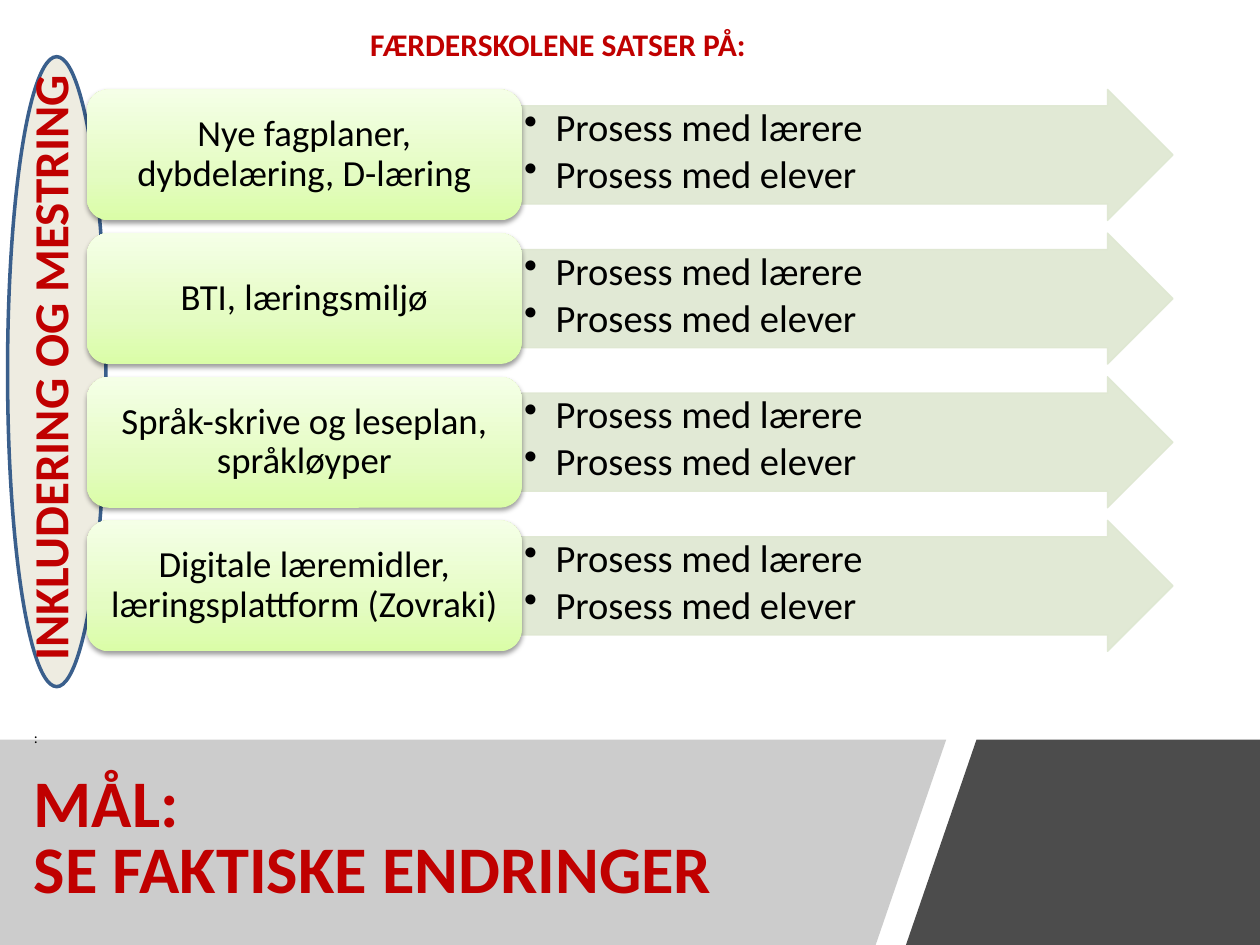
import pptx
import pptx.dml.color
import pptx.enum.shapes
import pptx.enum.text
import pptx.oxml
import pptx.oxml.ns
import pptx.util
from lxml import etree

Inches = pptx.util.Inches
Pt = pptx.util.Pt
SHAPE = pptx.enum.shapes.MSO_SHAPE
ANCHOR = pptx.enum.text.MSO_ANCHOR
ALIGN = pptx.enum.text.PP_ALIGN

HEADING = "FÆRDERSKOLENE SATSER PÅ:"
SIDE_LABEL = "INKLUDERING OG MESTRING"
GOAL_MARK = ":"
GOAL = ["MÅL:", "SE FAKTISKE ENDRINGER"]
PROCESSES = ["Prosess med lærere", "Prosess med elever"]
FOCUS_AREAS = [
    "Nye fagplaner, dybdelæring, D-læring",
    "BTI, læringsmiljø",
    "Språk-skrive og leseplan, språkløyper",
    "Digitale læremidler, læringsplattform (Zovraki)",
]
BANDS = [
    ([(0, 5.87), (7.51, 5.87), (6.95, 7.5), (0, 7.5)], "808080", 40),
    ([(7.75, 5.87), (10, 5.87), (10, 7.5), (7.19, 7.5)], "000000", 70),
]
THEME = {
    "font": "Calibri",
    "text": "000000",
    "accent": "C00000",
    "ellipse": "EEECE1",
    "ellipse_line": "3A5F8C",
    "arrow": "DEE7D1",
    "gradient": [(0, "DAFDA7"), (35, "E4FCC2"), (100, "F5FFE7")],
    "mark": 8.6,
    "goal": 38,
    "heading": 18,
    "side": 28,
    "area": 21,
    "process": 22,
}
ROW_TOP, ROW_STEP, ROW_HEIGHT = 0.71, 1.14, 1.04
AREA_LEFT, AREA_WIDTH, ARROW_WIDTH = 0.69, 3.45, 5.17


def rgb(code):
    return pptx.dml.color.RGBColor.from_string(code)


def paint(fill, code, opacity=100):
    fill.solid()
    fill.fore_color.rgb = rgb(code)
    if opacity < 100:
        color = fill._xPr.find(".//" + pptx.oxml.ns.qn("a:srgbClr"))
        etree.SubElement(color, pptx.oxml.ns.qn("a:alpha")).set("val", str(opacity * 1000))


def add_preset(page, kind, left, top, width, height):
    shape = page.shapes.add_shape(
        kind, Inches(left), Inches(top), Inches(width), Inches(height))
    shape.shadow.inherit = False
    return shape


def add_label(page, left, top, width, height):
    box = page.shapes.add_textbox(
        Inches(left), Inches(top), Inches(width), Inches(height))
    box.text_frame.word_wrap = True
    return box


def style(para, size, color="text", bold=False, align=ALIGN.LEFT, spacing=1.0, after=0):
    para.alignment = align
    para.line_spacing = spacing
    para.space_after = Pt(after)
    for span in para.runs:
        span.font.name = THEME["font"]
        span.font.size = Pt(THEME[size])
        span.font.bold = bold
        span.font.color.rgb = rgb(THEME[color])


def set_margins(frame, side, edge):
    frame.margin_left = frame.margin_right = Inches(side)
    frame.margin_top = frame.margin_bottom = Inches(edge)


def add_bullet(para):
    props = para._p.get_or_add_pPr()
    props.set("marL", str(Inches(0.25)))
    props.set("indent", str(-Inches(0.25)))
    etree.SubElement(props, pptx.oxml.ns.qn("a:buChar")).set("char", "•")


def add_gradient_and_shadow(shape):
    namespace = pptx.oxml.ns.nsdecls("a")
    stops = "".join(
        f'<a:gs pos="{place * 1000}"><a:srgbClr val="{code}"/></a:gs>'
        for place, code in THEME["gradient"])
    gradient = pptx.oxml.parse_xml(
        f'<a:gradFill {namespace} rotWithShape="1"><a:gsLst>{stops}</a:gsLst>'
        '<a:lin ang="16200000" scaled="0"/></a:gradFill>')
    shadow = pptx.oxml.parse_xml(
        f'<a:outerShdw {namespace} blurRad="{Pt(3.1)}" dist="{Pt(1.6)}" dir="5400000" '
        'rotWithShape="0"><a:srgbClr val="000000"><a:alpha val="38000"/></a:srgbClr></a:outerShdw>')
    props = shape._element.spPr
    props.find(pptx.oxml.ns.qn("a:prstGeom")).addnext(gradient)
    props.find(pptx.oxml.ns.qn("a:effectLst")).append(shadow)


def add_band(page, points, code, opacity):
    corners = [(Inches(x), Inches(y)) for x, y in points]
    builder = page.shapes.build_freeform(*corners[0])
    builder.add_line_segments(corners[1:], close=True)
    band = builder.convert_to_shape()
    band.shadow.inherit = False
    paint(band.fill, code, opacity)
    band.line.fill.background()


def add_row(page, top, area):
    arrow = add_preset(page, SHAPE.RIGHT_ARROW, AREA_LEFT + AREA_WIDTH, top, ARROW_WIDTH, ROW_HEIGHT)
    arrow.adjustments[0] = 0.75
    paint(arrow.fill, THEME["arrow"], 90)
    paint(arrow.line.fill, THEME["arrow"], 90)
    arrow.line.width = Pt(0.75)
    frame = arrow.text_frame
    set_margins(frame, 0.02, 0.02)
    frame.vertical_anchor = ANCHOR.TOP
    frame.text = "\n".join(PROCESSES)
    for para in frame.paragraphs:
        style(para, "process", spacing=0.9, after=3)
        add_bullet(para)

    card = add_preset(page, SHAPE.ROUNDED_RECTANGLE, AREA_LEFT, top, AREA_WIDTH, ROW_HEIGHT)
    card.line.fill.background()
    add_gradient_and_shadow(card)
    frame = card.text_frame
    set_margins(frame, 0.09, 0.04)
    frame.vertical_anchor = ANCHOR.MIDDLE
    frame.text = area
    style(frame.paragraphs[0], "area", align=ALIGN.CENTER, spacing=0.9)


def main():
    deck = pptx.Presentation()
    deck.slide_width, deck.slide_height = Inches(10), Inches(7.5)
    page = deck.slides.add_slide(deck.slide_layouts[6])

    ellipse = add_preset(page, SHAPE.OVAL, 0.06, 0.45, 0.78, 5)
    paint(ellipse.fill, THEME["ellipse"])
    paint(ellipse.line.fill, THEME["ellipse_line"])
    ellipse.line.width = Pt(2)

    for band in BANDS:
        add_band(page, *band)

    goal = add_label(page, 0.17, 5.77, 6.85, 1.6)
    goal.text_frame.text = "\n".join([GOAL_MARK] + GOAL)
    mark, *lines = goal.text_frame.paragraphs
    style(mark, "mark", spacing=0.7, after=21)
    for para in lines:
        style(para, "goal", "accent", True, spacing=0.7, after=6)

    for index, area in enumerate(FOCUS_AREAS):
        add_row(page, ROW_TOP + index * ROW_STEP, area)

    heading = add_label(page, 2.84, 0.15, 4.1, 0.4)
    heading.text_frame.text = HEADING
    style(heading.text_frame.paragraphs[0], "heading", "accent", True)

    side = add_label(page, -2.66, 3.01, 6.1, 0.57)
    side.rotation = 270
    side.text_frame.margin_left = Inches(1.1)
    side.text_frame.text = SIDE_LABEL
    style(side.text_frame.paragraphs[0], "side", "accent", True)

    deck.save("out.pptx")


if __name__ == "__main__":
    main()
